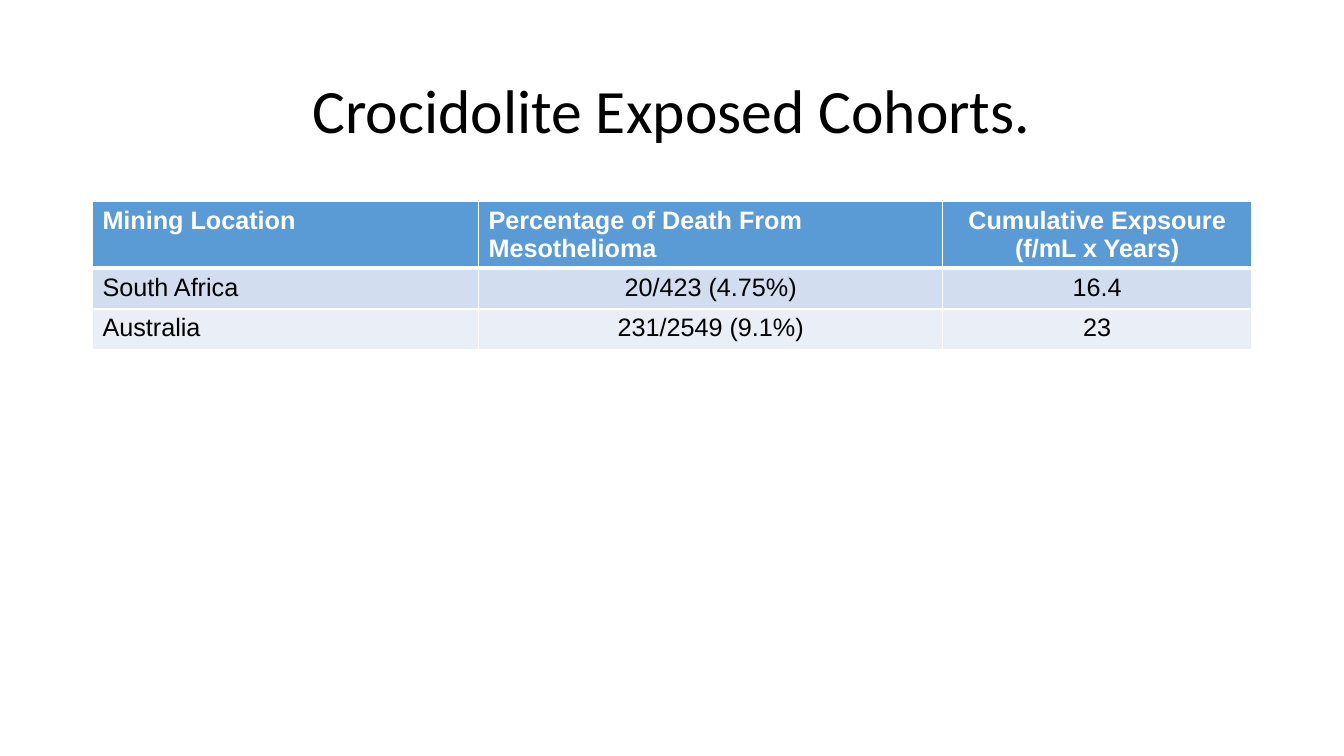
from dataclasses import dataclass

from lxml.etree import SubElement
from pptx import Presentation
from pptx.dml.color import RGBColor
from pptx.enum.text import MSO_ANCHOR, MSO_AUTO_SIZE, PP_ALIGN as Align
from pptx.oxml.ns import qn
from pptx.util import Cm, Pt

COLORS = {
    "text": "000000",
    "white": "FFFFFF",
    "header": "5B9BD5",
    "band_dark": "D2DEEF",
    "band_light": "EAEFF7",
}
LEFT, WIDTH = 2.33, 29.21
ROW_HEIGHT = 1.03
THIN, THICK = 1, 3


@dataclass(frozen=True)
class Column:
    heading: tuple[str, ...]
    width: float
    heading_align: Align
    body_align: Align


@dataclass(frozen=True)
class Cohort:
    location: str
    deaths: str
    exposure: str


COLUMNS = [
    Column(("Mining Location",), 9.73, Align.LEFT, Align.LEFT),
    Column(("Percentage of Death From Mesothelioma",), 11.7, Align.LEFT, Align.CENTER),
    Column(("Cumulative Expsoure", "(f/mL x Years)"), 7.78, Align.CENTER, Align.CENTER),
]
COHORTS = [
    Cohort("South Africa", "20/423 (4.75%)", "16.4"),
    Cohort("Australia", "231/2549 (9.1%)", "23"),
]


def rgb(name: str) -> RGBColor:
    return RGBColor.from_string(COLORS[name])


def add_run(paragraph, text: str, font: str, size: int, color: str, bold: bool = False) -> None:
    run = paragraph.add_run()
    run.text = text
    run.font.name = font
    run.font.size = Pt(size)
    run.font.bold = bold
    run.font.color.rgb = rgb(color)


def add_borders(cell, top: int, bottom: int) -> None:
    """Draw white cell borders; must run before the cell is filled."""
    properties = cell._tc.get_or_add_tcPr()
    for side, width in (("L", THIN), ("R", THIN), ("T", top), ("B", bottom)):
        line = SubElement(properties, qn(f"a:ln{side}"), w=str(Pt(width)))
        fill = SubElement(line, qn("a:solidFill"))
        SubElement(fill, qn("a:srgbClr"), val=COLORS["white"])


def fill_cell(cell, lines: tuple[str, ...], align: Align, fill: str, color: str,
              bold: bool = False, top: int = THIN, bottom: int = THIN) -> None:
    add_borders(cell, top, bottom)
    cell.fill.solid()
    cell.fill.fore_color.rgb = rgb(fill)
    frame = cell.text_frame
    for index, line in enumerate(lines):
        paragraph = frame.add_paragraph() if index else frame.paragraphs[0]
        paragraph.alignment = align
        add_run(paragraph, line, "Arial", 18, color, bold)


def add_title(slide, text: str) -> None:
    title = slide.shapes.title
    title.left, title.top, title.width, title.height = Cm(LEFT), Cm(1.01), Cm(WIDTH), Cm(3.68)
    frame = title.text_frame
    frame.word_wrap = True
    frame.auto_size = MSO_AUTO_SIZE.NONE
    frame.vertical_anchor = MSO_ANCHOR.MIDDLE
    paragraph = frame.paragraphs[0]
    paragraph.alignment = Align.CENTER
    paragraph.line_spacing = 0.9
    add_run(paragraph, text, "Calibri", 44, "text")


def add_cohort_table(slide) -> None:
    row_count = len(COHORTS) + 1
    table = slide.shapes.add_table(row_count, len(COLUMNS), Cm(LEFT), Cm(5.08),
                                   Cm(WIDTH), Cm(row_count * ROW_HEIGHT)).table
    for index, column in enumerate(COLUMNS):
        table.columns[index].width = Cm(column.width)
        fill_cell(table.cell(0, index), column.heading, column.heading_align,
                  "header", "white", bold=True, bottom=THICK)
    for row, cohort in enumerate(COHORTS, start=1):
        band = "band_dark" if row % 2 else "band_light"
        values = (cohort.location, cohort.deaths, cohort.exposure)
        for index, (column, value) in enumerate(zip(COLUMNS, values)):
            fill_cell(table.cell(row, index), (value,), column.body_align, band, "text",
                      top=THICK if row == 1 else THIN)


def main() -> None:
    presentation = Presentation()
    presentation.slide_width, presentation.slide_height = Cm(33.87), Cm(19.05)
    slide = presentation.slides.add_slide(presentation.slide_layouts.get_by_name("Title Only"))
    add_title(slide, "Crocidolite Exposed Cohorts.")
    add_cohort_table(slide)
    presentation.save("out.pptx")


if __name__ == "__main__":
    main()
